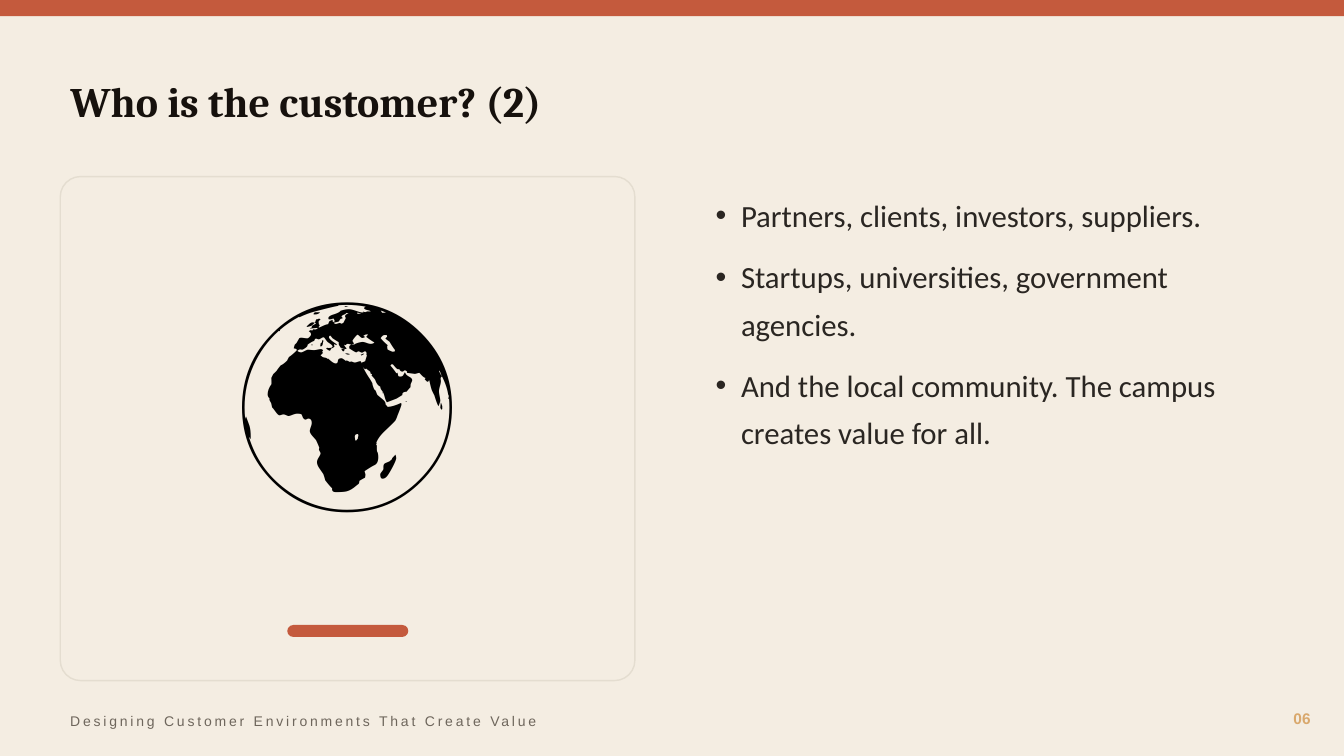
from lxml import etree
from pptx import Presentation
from pptx import util as u
from pptx.dml import color
from pptx.enum import shapes, text
from pptx.oxml import ns

COLORS = {
    "paper": "F4EDE2", "accent": "C45A3D", "title": "16110D", "border": "E4DDD0",
    "globe": "000000", "body": "2A2622", "number": "D9A86C", "footer": "6E665C",
}
LEFT, CARD_TOP, CARD_WIDTH = 1.52, 4.45, 14.48


def add_block(kind, box, fill):
    sp = s.shapes.add_shape(kind, *[u.Cm(v) for v in box])
    sp.shadow.inherit = False
    sp.fill.solid()
    sp.fill.fore_color.rgb = color.RGBColor.from_string(COLORS[fill])
    sp.line.fill.background()
    return sp


def set_text(sp, box, lines, font, size, tint, bold=False, align=text.PP_ALIGN.LEFT,
             anchor=text.MSO_ANCHOR.MIDDLE):
    sp.left, sp.top, sp.width, sp.height = [u.Cm(v) for v in box]
    tf = sp.text_frame
    tf.text = "\n".join(lines)
    tf.word_wrap = True
    tf.auto_size = text.MSO_AUTO_SIZE.NONE
    tf.vertical_anchor = anchor
    for p in tf.paragraphs:
        p.alignment = align
        for r in p.runs:
            r.font.name, r.font.size, r.font.bold = font, u.Pt(size), bold
            r.font.color.rgb = color.RGBColor.from_string(COLORS[tint])
    return tf


prs = Presentation()
prs.slide_width, prs.slide_height = u.Cm(33.87), u.Cm(19.05)
s = prs.slides.add_slide(prs.slide_layouts[1])
s.background.fill.solid()
s.background.fill.fore_color.rgb = color.RGBColor.from_string(COLORS["paper"])

add_block(shapes.MSO_SHAPE.RECTANGLE, (0, 0, 33.87, 0.41), "accent")
set_text(s.shapes.title, (LEFT, 1.27, 30.73, 2.54), ["Who is the customer? (2)"],
         "Cambria", 30, "title", bold=True)

card = add_block(shapes.MSO_SHAPE.ROUNDED_RECTANGLE, (LEFT, CARD_TOP, CARD_WIDTH, 12.7), "paper")
card.adjustments[0] = 0.04
card.line.color.rgb = color.RGBColor.from_string(COLORS["border"])
card.line.width = u.Pt(1)

globe = s.shapes.add_textbox(0, 0, 0, 0)
set_text(globe, (LEFT, CARD_TOP, CARD_WIDTH, 10.41), ["🌍"], "Calibri", 150, "globe",
         align=text.PP_ALIGN.CENTER)

bar = add_block(shapes.MSO_SHAPE.ROUNDED_RECTANGLE, (7.24, 15.75, 3.05, 0.3), "accent")
bar.adjustments[0] = 0.5

customers = [
    "Partners, clients, investors, suppliers.",
    "Startups, universities, government agencies.",
    "And the local community. The campus creates value for all.",
]
tf = set_text(s.placeholders[1], (17.78, 4.57, 14.48, 12.7), customers, "Calibri", 22, "body",
              anchor=text.MSO_ANCHOR.TOP)
for p in tf.paragraphs:
    pPr = p._p.get_or_add_pPr()
    pPr.set("marL", str(u.Cm(0.64)))
    pPr.set("indent", str(-u.Cm(0.64)))
    etree.SubElement(pPr, ns.qn("a:buChar")).set("char", "•")
    p.line_spacing = 1.28
    p.space_before, p.space_after = u.Pt(0), u.Pt(10)

number = s.shapes.add_textbox(0, 0, 0, 0)
set_text(number, (30.99, 17.65, 2.29, 0.89), ["06"], "Arial", 11, "number", bold=True,
         align=text.PP_ALIGN.RIGHT)

footer = s.shapes.add_textbox(0, 0, 0, 0)
tf = set_text(footer, (LEFT, 17.78, 20.32, 0.76),
              ["Designing Customer Environments That Create Value"], "Arial", 10, "footer")
tf.paragraphs[0].runs[0].font._element.set("spc", "200")

prs.save("out.pptx")
